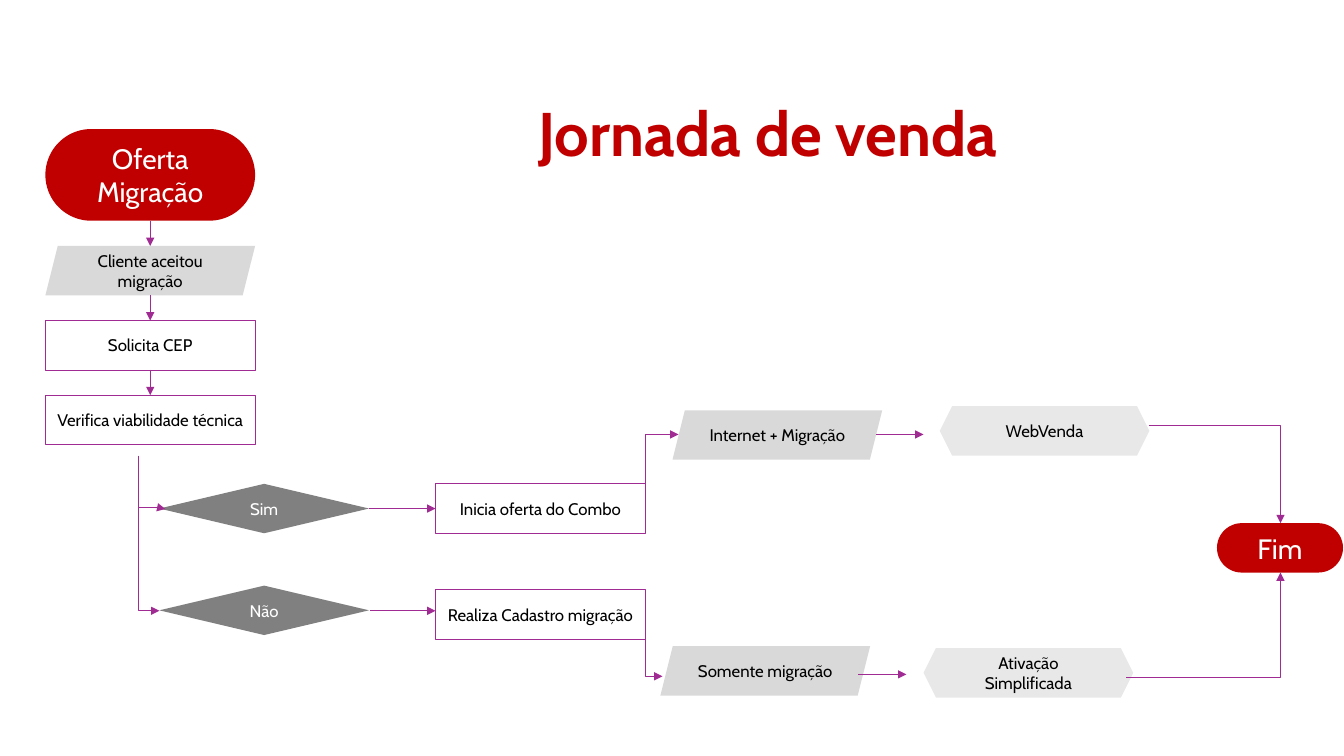
from dataclasses import dataclass
from typing import Optional

from lxml import etree
from pptx import Presentation
from pptx import util as u
from pptx.dml import color
from pptx.enum import shapes, text
from pptx.oxml import ns
from pptx.shapes import autoshape, connector as link
from pptx.slide import Slide
from pptx.text.text import TextFrame

SHAPE = shapes.MSO_SHAPE
BOTTOM, LEFT, RIGHT, TOP = 2, 1, 3, 0


@dataclass(frozen=True)
class Theme:
    font: str = "Cabin"
    red: str = "C00000"
    purple: str = "A02B93"
    dark_grey: str = "808080"
    grey: str = "D9D9D9"
    light_grey: str = "E8E8E8"
    white: str = "FFFFFF"
    black: str = "000000"
    title_size: int = 44
    terminal_size: int = 20
    step_size: int = 12
    line_width: float = 0.5


THEME = Theme()


@dataclass(frozen=True)
class StepStyle:
    geometry: SHAPE
    fill: str
    text_color: str = THEME.black
    size: int = THEME.step_size
    outlined: bool = False
    wrap: bool = True


@dataclass(frozen=True)
class Step:
    key: str
    label: str
    style: StepStyle
    left: float
    top: float
    width: float = 2.08
    height: float = 0.49


@dataclass(frozen=True)
class Arrow:
    start: tuple[float, float]
    end: tuple[float, float]
    source: Optional[tuple[str, int]] = None
    target: Optional[tuple[str, int]] = None


@dataclass(frozen=True)
class Elbow:
    start: tuple[float, float]
    end: tuple[float, float]
    vertical_first: bool = True
    bend: Optional[int] = None  # thousandths of a percent, for a third segment


TERMINAL = StepStyle(SHAPE.ROUNDED_RECTANGLE, THEME.red, THEME.white, THEME.terminal_size)
PROCESS = StepStyle(SHAPE.RECTANGLE, THEME.white, outlined=True)
DECISION = StepStyle(SHAPE.DIAMOND, THEME.dark_grey, THEME.white, wrap=False)
DATA = StepStyle(SHAPE.PARALLELOGRAM, THEME.grey)
SYSTEM = StepStyle(SHAPE.HEXAGON, THEME.light_grey)

# Columns and rows of the flow
FIRST_X, DECISION_X, ACTION_X = 0.45, 1.58, 4.32
AXIS_X, BRANCH_X, END_X = 1.49, 1.37, 12.7
FIRST_TOP, PITCH, STEP_HEIGHT = 2.44, 0.74, 0.49

STEPS = [
    Step("offer", "Oferta Migração", TERMINAL, FIRST_X, 1.28, height=0.91),
    Step("accepted", "Cliente aceitou migração", DATA, FIRST_X, FIRST_TOP),
    Step("postcode", "Solicita CEP", PROCESS, FIRST_X, FIRST_TOP + PITCH),
    Step("check", "Verifica viabilidade técnica", PROCESS, FIRST_X, FIRST_TOP + 2 * PITCH),
    Step("yes", "Sim", DECISION, DECISION_X, 4.8),
    Step("no", "Não", DECISION, DECISION_X, 5.81),
    Step("bundle", "Inicia oferta do Combo", PROCESS, ACTION_X, 4.8),
    Step("register", "Realiza Cadastro migração", PROCESS, ACTION_X, 5.85),
    Step("internet", "Internet + Migração", DATA, 6.67, 4.07),
    Step("only", "Somente migração", DATA, 6.55, 6.41),
    Step("sales", "WebVenda", SYSTEM, 9.32, 4.03),
    Step("activation", "Ativação Simplificada", SYSTEM, 9.16, 6.43),
    Step("end", "Fim", TERMINAL, 12.07, 5.19, width=1.25),
]

ARROWS = [
    Arrow((AXIS_X, 2.19), (AXIS_X, FIRST_TOP), source=("offer", BOTTOM)),
    Arrow((AXIS_X, FIRST_TOP + STEP_HEIGHT), (AXIS_X, 3.18), target=("postcode", TOP)),
    Arrow((AXIS_X, 3.67), (AXIS_X, 3.92), ("postcode", BOTTOM), ("check", TOP)),
    Arrow((3.67, 5.05), (ACTION_X, 5.05), ("yes", RIGHT), ("bundle", LEFT)),
    Arrow((3.67, 6.06), (ACTION_X, 6.06)),
    Arrow((8.69, 4.31), (9.16, 4.31)),
    Arrow((8.51, 6.69), (8.99, 6.69)),
]

ELBOWS = [
    Elbow((BRANCH_X, 4.52), (1.64, 5.05), bend=97300),
    Elbow((BRANCH_X, 4.93), (DECISION_X, 6.06)),
    Elbow((6.4, 5), (6.73, 4.31)),
    Elbow((6.4, 6.11), (6.57, 6.71)),
    Elbow((11.4, 4.22), (END_X, 5.19), vertical_first=False),
    Elbow((11.17, 6.72), (END_X, 5.68), vertical_first=False),
]


def write_text(frame: TextFrame, content: str, *, size: int, rgb: str, bold: bool = False,
               align: text.PP_ALIGN = text.PP_ALIGN.CENTER,
               anchor: text.MSO_ANCHOR = text.MSO_ANCHOR.MIDDLE,
               wrap: bool = True, inset: Optional[float] = None,
               line_spacing: Optional[float] = None) -> None:
    frame.text = content
    frame.word_wrap = wrap
    frame.vertical_anchor = anchor
    if inset is not None:
        frame.margin_left = frame.margin_right = u.Inches(inset)
        frame.margin_top = frame.margin_bottom = u.Inches(inset)
    paragraph = frame.paragraphs[0]
    paragraph.alignment = align
    paragraph.line_spacing = line_spacing
    font = paragraph.runs[0].font
    font.name, font.size, font.bold = THEME.font, u.Pt(size), bold
    font.color.rgb = color.RGBColor.from_string(rgb)


def add_title(slide: Slide, content: str) -> None:
    title = slide.shapes.title
    title.left, title.top = u.Inches(5.34), u.Inches(1.02)
    title.width, title.height = u.Inches(5.61), u.Inches(0.67)
    write_text(title.text_frame, content, size=THEME.title_size, rgb=THEME.red, bold=True,
               align=text.PP_ALIGN.LEFT, anchor=text.MSO_ANCHOR.TOP, inset=0,
               line_spacing=0.9)
    title.text_frame.auto_size = text.MSO_AUTO_SIZE.SHAPE_TO_FIT_TEXT


def add_step(slide: Slide, step: Step) -> autoshape.Shape:
    style = step.style
    shape = slide.shapes.add_shape(style.geometry, u.Inches(step.left), u.Inches(step.top),
                                   u.Inches(step.width), u.Inches(step.height))
    # The theme style would darken the outline
    shape.element.remove(shape.element.find(ns.qn("p:style")))
    shape.shadow.inherit = False
    shape.fill.solid()
    shape.fill.fore_color.rgb = color.RGBColor.from_string(style.fill)
    if style.geometry == SHAPE.ROUNDED_RECTANGLE:
        shape.adjustments[0] = 0.5
    if style.outlined:
        shape.line.color.rgb = color.RGBColor.from_string(THEME.purple)
        shape.line.width = u.Pt(THEME.line_width)
    else:
        shape.line.fill.background()
    write_text(shape.text_frame, step.label, size=style.size, rgb=style.text_color,
               wrap=style.wrap, inset=None if style.wrap else 0)
    return shape


def add_line(slide: Slide, kind: shapes.MSO_CONNECTOR, start: tuple[float, float],
             end: tuple[float, float]) -> link.Connector:
    connector = slide.shapes.add_connector(kind, *map(u.Inches, start + end))
    connector.line.color.rgb = color.RGBColor.from_string(THEME.purple)
    connector.line.width = u.Pt(THEME.line_width)
    properties = connector.element.spPr
    etree.SubElement(properties.find(ns.qn("a:ln")), ns.qn("a:tailEnd"), type="triangle")
    etree.SubElement(properties, ns.qn("a:effectLst"))
    return connector


def add_arrow(slide: Slide, arrow: Arrow, steps: dict[str, autoshape.Shape]) -> None:
    connector = add_line(slide, shapes.MSO_CONNECTOR.STRAIGHT, arrow.start, arrow.end)
    if arrow.source:
        connector.begin_connect(steps[arrow.source[0]], arrow.source[1])
    if arrow.target:
        connector.end_connect(steps[arrow.target[0]], arrow.target[1])


def add_elbow(slide: Slide, elbow: Elbow) -> None:
    (x1, y1), (x2, y2) = start, end = elbow.start, elbow.end
    if elbow.vertical_first:  # turn a horizontal-first elbow about its centre
        middle_x, middle_y = (x1 + x2) / 2, (y1 + y2) / 2
        reach = abs(y2 - y1) / 2
        rise = (x2 - x1) / 2 * (1 if y2 > y1 else -1)
        start = (middle_x + reach, middle_y - rise)
        end = (middle_x - reach, middle_y + rise)
    connector = add_line(slide, shapes.MSO_CONNECTOR.ELBOW, start, end)
    properties = connector.element.spPr
    if elbow.vertical_first:
        angle = 270 if y2 > y1 else 90
        properties.find(ns.qn("a:xfrm")).set("rot", str(angle * 60000))
    geometry = properties.find(ns.qn("a:prstGeom"))
    if elbow.bend is None:
        geometry.set("prst", "bentConnector2")
    else:
        etree.SubElement(geometry.find(ns.qn("a:avLst")), ns.qn("a:gd"),
                         name="adj1", fmla=f"val {elbow.bend}")


def main() -> None:
    presentation = Presentation()
    presentation.slide_width, presentation.slide_height = u.Inches(13.33), u.Inches(7.5)
    slide = presentation.slides.add_slide(presentation.slide_layouts[5])
    add_title(slide, "Jornada de venda")
    steps = {step.key: add_step(slide, step) for step in STEPS}
    for arrow in ARROWS:
        add_arrow(slide, arrow, steps)
    for elbow in ELBOWS:
        add_elbow(slide, elbow)
    presentation.save("out.pptx")


if __name__ == "__main__":
    main()
